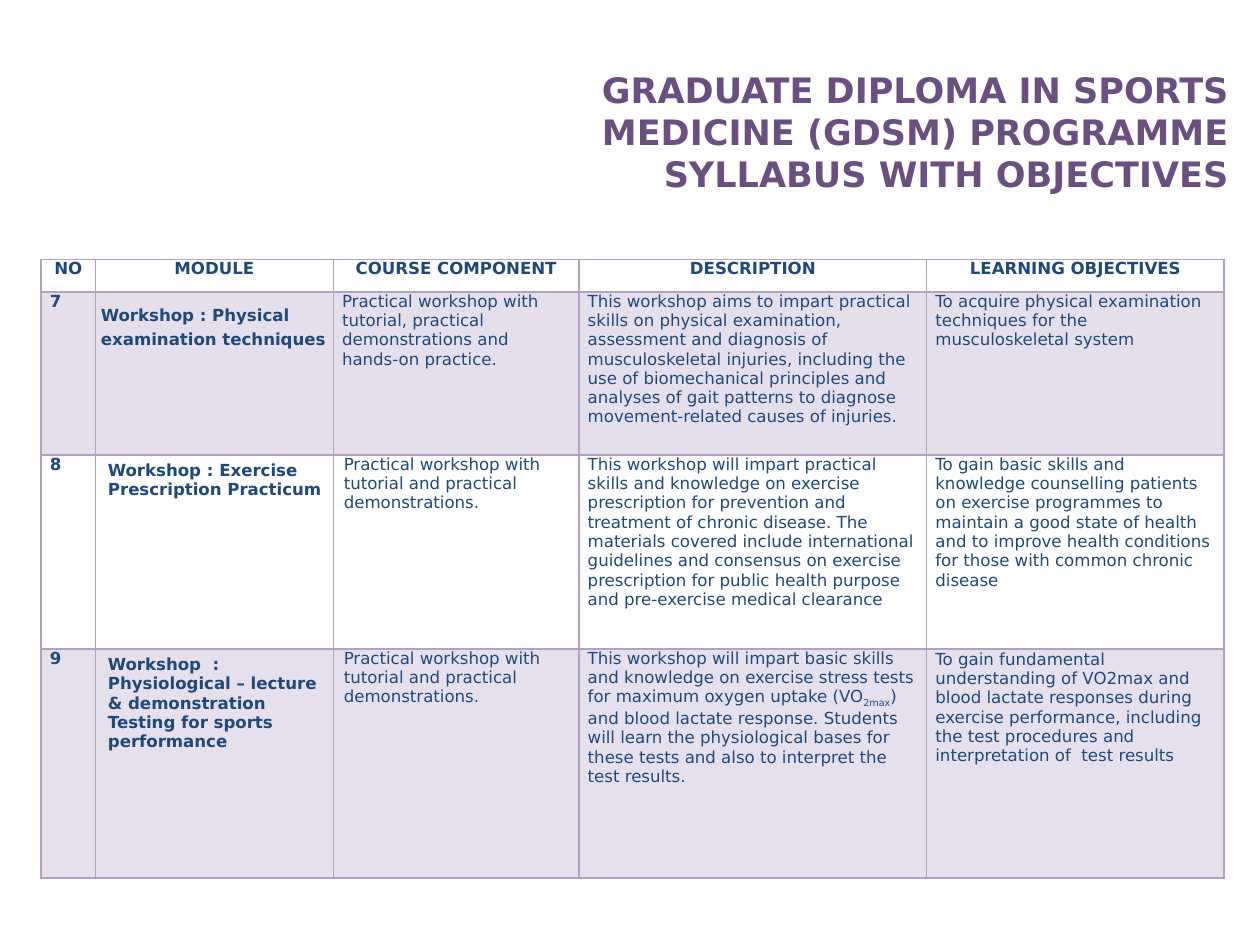
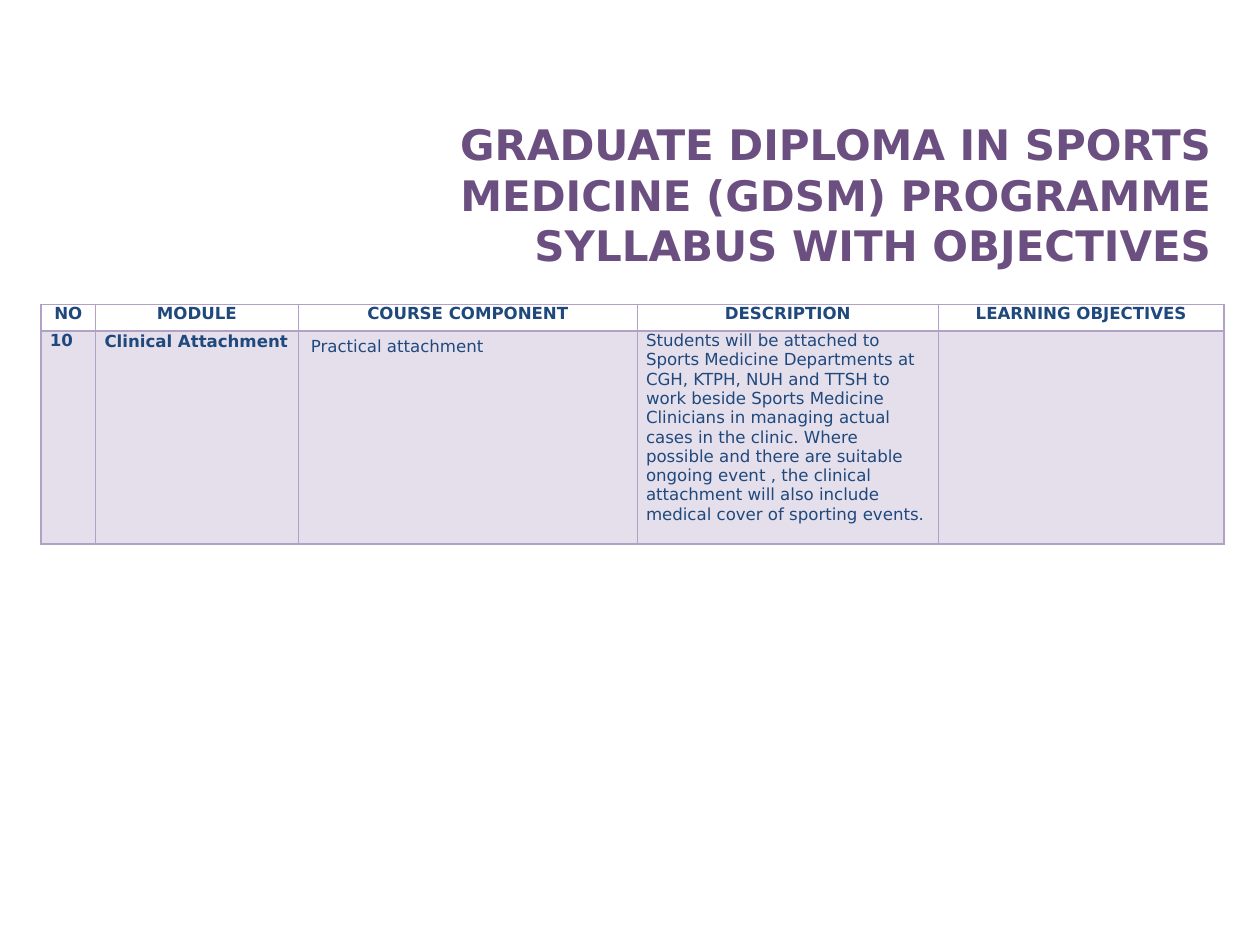
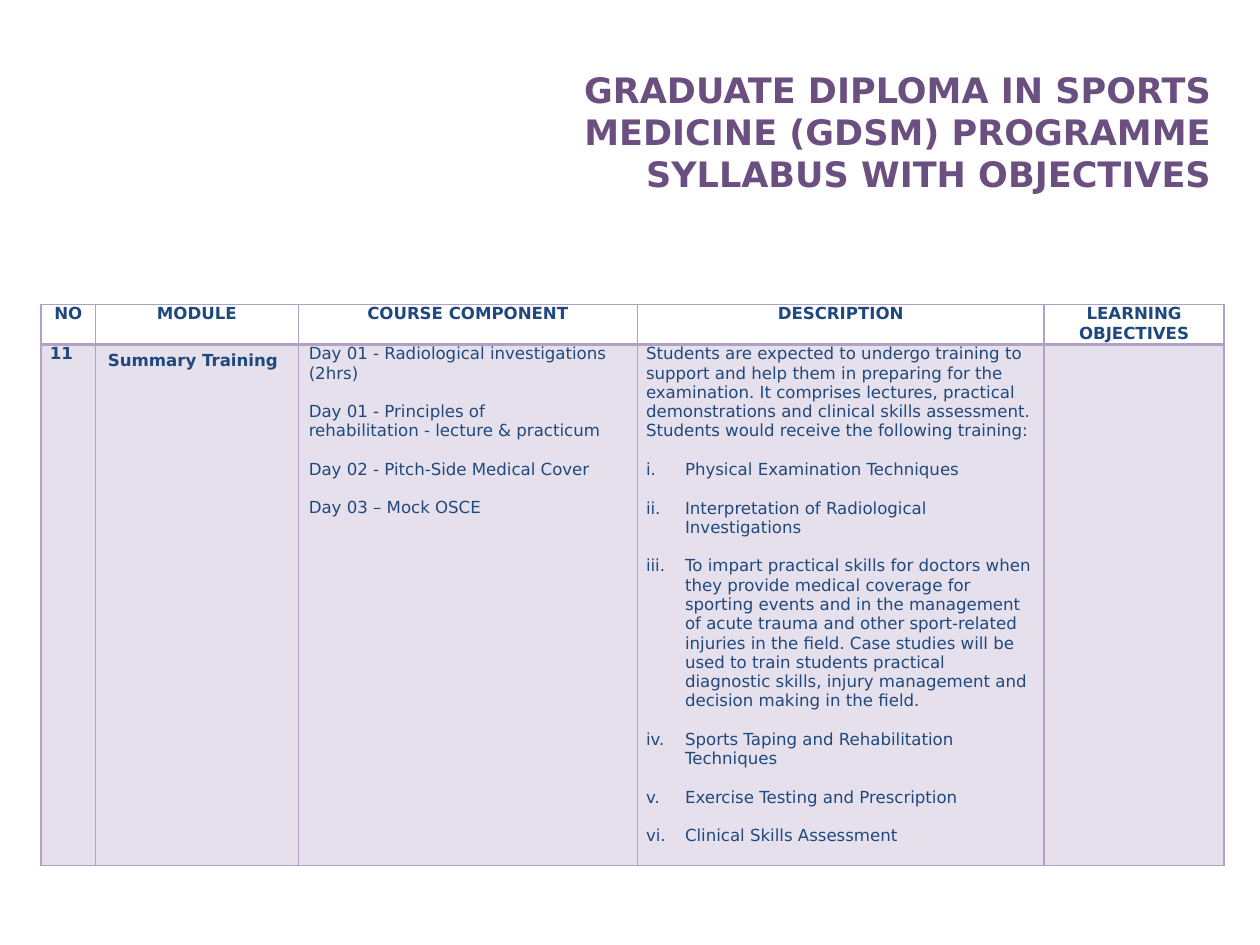
import pptx
import pptx.dml.color
import pptx.enum.text
import pptx.oxml
import pptx.oxml.ns
import pptx.util

Pt = pptx.util.Pt
ALIGN = pptx.enum.text.PP_ALIGN
COLOURS = {
    "title": "6C4F81",
    "text": "1F497D",
    "border": "B2A1C7",
    "lilac": "E5DFEC",
    "mist": "E6E0EC",
}
FONT = "DejaVu Sans"
HEADING = "GRADUATE DIPLOMA IN SPORTS MEDICINE (GDSM) PROGRAMME SYLLABUS WITH OBJECTIVES"
HEADERS = ["NO", "MODULE", "COURSE COMPONENT", "DESCRIPTION", "LEARNING OBJECTIVES"]
TABLE_LEFT, TABLE_WIDTH = 23.5, 676
BODY_SIZE = 9.5
LIST_INDENT = 22.3


def colour(key):
    """Return the palette colour for a key."""
    return pptx.dml.color.RGBColor.from_string(COLOURS[key])


def add_numbering(paragraph):
    """Give a paragraph a hanging lower-case roman number."""
    properties = paragraph._p.get_or_add_pPr()
    properties.set("marL", str(Pt(LIST_INDENT)))
    properties.set("indent", str(-Pt(LIST_INDENT)))
    numbering = pptx.oxml.parse_xml(
        f'<a:buAutoNum {pptx.oxml.ns.nsdecls("a")} type="romanLcPeriod"/>')
    properties.append(numbering)


def write(frame, text, size=BODY_SIZE, bold=False, tint="text", align=ALIGN.LEFT,
          gap=0, leading=None, numbered_from=None, subscript=None):
    """Fill a text frame with one paragraph per line of text."""
    for index, line in enumerate(text.split("\n")):
        paragraph = frame.add_paragraph() if index else frame.paragraphs[0]
        if index:
            paragraph.space_before = Pt(gap)
        if leading:
            paragraph.line_spacing = Pt(leading)
        if numbered_from is not None and index >= numbered_from:
            add_numbering(paragraph)
        paragraph.alignment = align
        for part, piece in enumerate(line.split("\v")):
            if part:
                paragraph.add_line_break()
            for words in piece.partition(subscript) if subscript else [piece]:
                if not words:
                    continue
                run = paragraph.add_run()
                run.text = words
                run.font.name = FONT
                run.font.size = Pt(size)
                run.font.bold = bold
                run.font.color.rgb = colour(tint)
                if words == subscript:
                    run._r.get_or_add_rPr().set("baseline", "-25000")


def add_heading(slide, left, top, size):
    """Add the right-aligned programme heading."""
    box = slide.shapes.add_textbox(Pt(left), Pt(top), Pt(454.3), Pt(150))
    frame = box.text_frame
    frame.word_wrap = True
    frame.vertical_anchor = pptx.enum.text.MSO_ANCHOR.MIDDLE
    write(frame, HEADING, size=size, bold=True, tint="title",
          align=ALIGN.RIGHT, leading=1.2 * size)


def set_borders(cell, top=1, bottom=1):
    """Draw the four borders of a table cell."""
    properties = cell._tc.get_or_add_tcPr()
    for side, width in (("L", 1), ("R", 1), ("T", top), ("B", bottom)):
        properties.append(pptx.oxml.parse_xml(
            f'<a:ln{side} {pptx.oxml.ns.nsdecls("a")} w="{Pt(width)}"><a:solidFill>'
            f'<a:srgbClr val="{COLOURS["border"]}"/></a:solidFill></a:ln{side}>'))


def fill_cell(cell, text, fill=None, left=5, top=0, right=5, **text_format):
    """Set the fill, margins and text of a table cell."""
    if fill:
        cell.fill.solid()
        cell.fill.fore_color.rgb = colour(fill)
    else:
        cell.fill.background()
    cell.margin_left, cell.margin_right = Pt(left), Pt(right)
    cell.margin_top, cell.margin_bottom = Pt(top), 0
    if text:
        write(cell.text_frame, text, **text_format)


def entry(text, **cell_format):
    """Pair the text of a cell with its format."""
    return text, cell_format


def module(text, left=7.2, top=3.6, right=5, **cell_format):
    """Describe a bold module name set in from the cell edges."""
    return entry(text, left=left, top=top, right=right, bold=True, **cell_format)


def add_syllabus(slide, top, columns, heights, modules):
    """Add a syllabus table; each module is a number, a fill and four entries."""
    widths = columns + [TABLE_WIDTH - sum(columns)]
    table = slide.shapes.add_table(
        len(modules) + 1, len(widths), Pt(TABLE_LEFT), Pt(top),
        Pt(TABLE_WIDTH), Pt(sum(heights))).table
    table.first_row = table.horz_banding = False
    for column, width in zip(table.columns, widths):
        column.width = Pt(width)
    for row, height in zip(table.rows, heights):
        row.height = Pt(height)
    for column, header in enumerate(HEADERS):
        cell = table.cell(0, column)
        set_borders(cell, bottom=1.5)
        fill_cell(cell, header, bold=True, align=ALIGN.CENTER)
    for row, (number, fill, *entries) in enumerate(modules, start=1):
        for column, (text, cell_format) in enumerate([entry(number, bold=True)] + entries):
            cell = table.cell(row, column)
            set_borders(cell, top=1.5 if row == 1 else 1)
            fill_cell(cell, text, fill=fill, **cell_format)


def workshops():
    """Return the workshop modules."""
    demonstrations = entry(
        "Practical workshop with tutorial and practical demonstrations.", left=6)
    return [
        ("7", "lilac",
         module("Workshop : Physical\nexamination techniques", left=3.2, top=8, right=0, gap=2.7),
         entry("Practical workshop with tutorial, practical demonstrations and "
               "hands-on practice."),
         entry("This workshop aims to impart practical skills on physical examination, "
               "assessment and diagnosis of musculoskeletal injuries, including the use of "
               "biomechanical principles and analyses of gait patterns to diagnose "
               "movement-related causes of injuries."),
         entry("To acquire physical examination techniques for the musculoskeletal system")),
        ("8", None,
         module("Workshop : Exercise Prescription Practicum"),
         demonstrations,
         entry("This workshop will impart practical skills and knowledge on exercise "
               "prescription for prevention and treatment of chronic disease. The materials "
               "covered include international guidelines and consensus on exercise "
               "prescription for public health purpose and pre-exercise medical clearance"),
         entry("To gain basic skills and knowledge counselling patients on exercise "
               "programmes to maintain a good state of health and to improve health "
               "conditions for those with common chronic disease")),
        ("9", "mist",
         module("Workshop  : Physiological – lecture & demonstration Testing for sports "
                "performance"),
         demonstrations,
         entry("This workshop will impart basic skills and knowledge on exercise stress "
               "tests for maximum oxygen uptake (VO2max) and blood lactate response. Students "
               "will learn the physiological bases for these tests and also to interpret the "
               "test results.", subscript="2max"),
         entry("To gain fundamental understanding of VO2max and blood lactate responses "
               "during exercise performance, including the test procedures and "
               "interpretation of  test results", top=0.7)),
    ]


def attachment():
    """Return the clinical attachment module."""
    return [
        ("10", "lilac",
         module("Clinical Attachment", left=5.3, top=0.5, right=0),
         entry("Practical attachment", left=7.2, top=3.6),
         entry("Students will be attached to Sports Medicine Departments at CGH, KTPH, NUH "
               "and TTSH to work beside Sports Medicine Clinicians in managing actual cases "
               "in the clinic. Where possible and there are suitable ongoing event , the "
               "clinical attachment will also include medical cover of sporting events."),
         entry("")),
    ]


def summary_training():
    """Return the summary training module."""
    days = [
        "Day 01 - Radiological investigations (2hrs)",
        "Day 01 - Principles of\vrehabilitation - lecture & practicum",
        "Day 02 - Pitch-Side Medical Cover",
        "Day 03 – Mock OSCE",
    ]
    training = [
        "Students are expected to undergo training to support and help them in preparing for "
        "the examination. It comprises lectures, practical demonstrations and clinical skills "
        "assessment. Students would receive the following training:",
        "Physical Examination Techniques",
        "Interpretation of Radiological Investigations",
        "To impart practical skills for doctors when they provide medical coverage for "
        "sporting events and in the management of acute trauma and other sport-related "
        "injuries in the field. Case studies will be used to train students practical "
        "diagnostic skills, injury management and decision making in the field.",
        "Sports Taping and Rehabilitation Techniques",
        "Exercise Testing and Prescription",
        "Clinical Skills Assessment",
    ]
    return [
        ("11", "mist",
         module("Summary Training"),
         entry("\n".join(days), left=6, gap=11),
         entry("\n".join(training), gap=11, numbered_from=1),
         entry("")),
    ]


def main():
    """Build the three syllabus slides."""
    deck = pptx.Presentation()
    deck.slide_width, deck.slide_height = Pt(720), Pt(540)
    syllabus = [
        ((254.9, 0, 20), 148.3, [31, 136, 140.4, 198.7],
         [18.5, 93.2, 110.8, 130.9], workshops()),
        ((244.8, 36, 24), 174, [31, 116, 193.7, 172], [15.3, 121.7], attachment()),
        ((244.8, 0, 20), 174, [31, 116, 193.7, 232.5], [22.2, 297.7], summary_training()),
    ]
    for heading, top, columns, heights, modules in syllabus:
        slide = deck.slides.add_slide(deck.slide_layouts[6])
        add_heading(slide, *heading)
        add_syllabus(slide, top, columns, heights, modules)
    deck.save("out.pptx")


if __name__ == "__main__":
    main()
